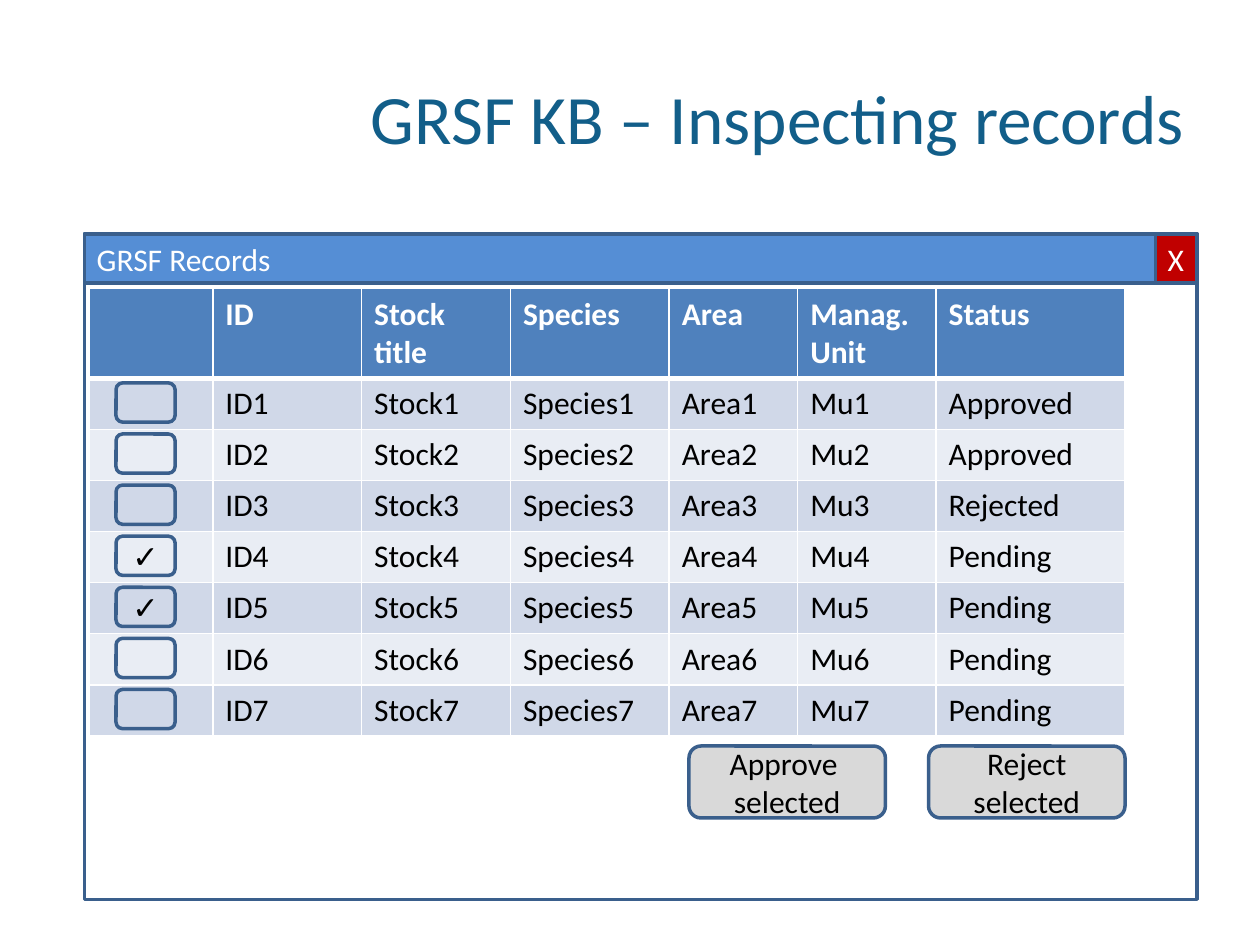
from dataclasses import dataclass

from lxml.etree import SubElement
from pptx import Presentation
from pptx.dml.color import RGBColor
from pptx.enum.shapes import MSO_SHAPE
from pptx.enum.text import MSO_ANCHOR, PP_ALIGN
from pptx.oxml.ns import qn
from pptx.util import Cm, Pt


@dataclass(frozen=True)
class Theme:
    font: str = "Calibri"
    title_size: float = 39.6
    text_size: float = 18
    line_width: float = 2
    title: str = "125E89"
    outline: str = "3A5F8C"
    bar: str = "558ED5"
    close: str = "C00000"
    button: str = "D9D9D9"
    header: str = "4F81BD"
    bands: tuple = ("D0D8E8", "E9EDF4")
    light: str = "FFFFFF"
    dark: str = "000000"


THEME = Theme()
COLUMN_WIDTHS = (2.49, 3, 3, 3.2, 2.59, 2.79, 3.81)
HEADER_HEIGHT = 1.8
ROW_HEIGHT = 1.03
HEADINGS = ("", "ID", "Stock title", "Species", "Area", "Manag. Unit", "Status")
PREFIXES = ("ID", "Stock", "Species", "Area", "Mu")
STATUSES = ("Approved", "Approved", "Rejected", "Pending", "Pending", "Pending", "Pending")
SELECTED = (4, 5)


def format_text(text_frame, color, size=THEME.text_size, align=PP_ALIGN.LEFT, bold=False):
    for paragraph in text_frame.paragraphs:
        paragraph.alignment = align
        for run in paragraph.runs:
            run.font.name = THEME.font
            run.font.size = Pt(size)
            run.font.bold = bold
            run.font.color.rgb = RGBColor.from_string(color)


def add_title(slide, text):
    title = slide.shapes.title
    title.left, title.top, title.width, title.height = Cm(5.92), Cm(0.76), Cm(18.21), Cm(3.18)
    title.text_frame.text = text
    title.text_frame.vertical_anchor = MSO_ANCHOR.MIDDLE
    format_text(title.text_frame, THEME.title, THEME.title_size, PP_ALIGN.RIGHT)


def add_box(shapes, kind, left, top, width, height, fill=None, text="",
            color=THEME.dark, align=PP_ALIGN.CENTER):
    shape = shapes.add_shape(kind, Cm(left), Cm(top), Cm(width), Cm(height))
    shape.shadow.inherit = False
    shape.line.color.rgb = RGBColor.from_string(THEME.outline)
    shape.line.width = Pt(THEME.line_width)
    if fill:
        shape.fill.solid()
        shape.fill.fore_color.rgb = RGBColor.from_string(fill)
    else:
        shape.fill.background()
    if text:
        shape.text_frame.text = text
        shape.text_frame.word_wrap = True
        shape.text_frame.vertical_anchor = MSO_ANCHOR.MIDDLE
        format_text(shape.text_frame, color, align=align)


def add_window(slide, caption):
    shapes = slide.shapes.add_group_shape().shapes
    add_box(shapes, MSO_SHAPE.RECTANGLE, 1.7, 4.72, 22.43, 13.41)
    add_box(shapes, MSO_SHAPE.RECTANGLE, 1.7, 4.72, 22.43, 0.99,
            THEME.bar, caption, THEME.light, PP_ALIGN.LEFT)
    add_box(shapes, MSO_SHAPE.RECTANGLE, 23.29, 4.72, 0.84, 0.99,
            THEME.close, "X", THEME.light, PP_ALIGN.LEFT)


def set_borders(cell, top, bottom):
    properties = cell._tc.get_or_add_tcPr()
    for side, width in (("L", 1), ("R", 1), ("T", top), ("B", bottom)):
        line = SubElement(properties, qn(f"a:ln{side}"), w=str(Pt(width)))
        SubElement(SubElement(line, qn("a:solidFill")), qn("a:srgbClr"), val=THEME.light)


def format_cell(cell, row_index):
    is_header = row_index == 0
    set_borders(cell, 3 if row_index == 1 else 1, 3 if is_header else 1)
    fill = THEME.header if is_header else THEME.bands[(row_index - 1) % 2]
    cell.fill.solid()
    cell.fill.fore_color.rgb = RGBColor.from_string(fill)
    format_text(cell.text_frame, THEME.light if is_header else THEME.dark, bold=is_header)


def add_records(slide):
    rows = [HEADINGS]
    for number, status in enumerate(STATUSES, 1):
        rows.append(("", *(f"{prefix}{number}" for prefix in PREFIXES), status))
    height = HEADER_HEIGHT + ROW_HEIGHT * len(STATUSES)
    table = slide.shapes.add_table(len(rows), len(HEADINGS), Cm(1.8), Cm(5.82),
                                   Cm(sum(COLUMN_WIDTHS)), Cm(height)).table
    for column, width in zip(table.columns, COLUMN_WIDTHS):
        column.width = Cm(width)
    for row_index, values in enumerate(rows):
        table.rows[row_index].height = Cm(ROW_HEIGHT if row_index else HEADER_HEIGHT)
        for column_index, value in enumerate(values):
            cell = table.cell(row_index, column_index)
            cell.text_frame.text = value
            format_cell(cell, row_index)


def add_checkboxes(slide):
    for index in range(len(STATUSES)):
        mark = "✓" if index + 1 in SELECTED else ""
        add_box(slide.shapes, MSO_SHAPE.ROUNDED_RECTANGLE, 2.34, 7.72 + index * ROW_HEIGHT,
                1.19, 0.79, text=mark)


def add_buttons(slide):
    for left, label in ((13.89, "Approve \nselected"), (18.72, "Reject\nselected")):
        add_box(slide.shapes, MSO_SHAPE.ROUNDED_RECTANGLE, left, 15.04, 3.96, 1.45,
                THEME.button, label)


def main():
    presentation = Presentation()
    presentation.slide_width, presentation.slide_height = Cm(25.4), Cm(19.05)
    slide = presentation.slides.add_slide(presentation.slide_layouts[5])
    add_title(slide, "GRSF KB – Inspecting records")
    add_window(slide, "GRSF Records")
    add_records(slide)
    add_checkboxes(slide)
    add_buttons(slide)
    presentation.save("out.pptx")


if __name__ == "__main__":
    main()
